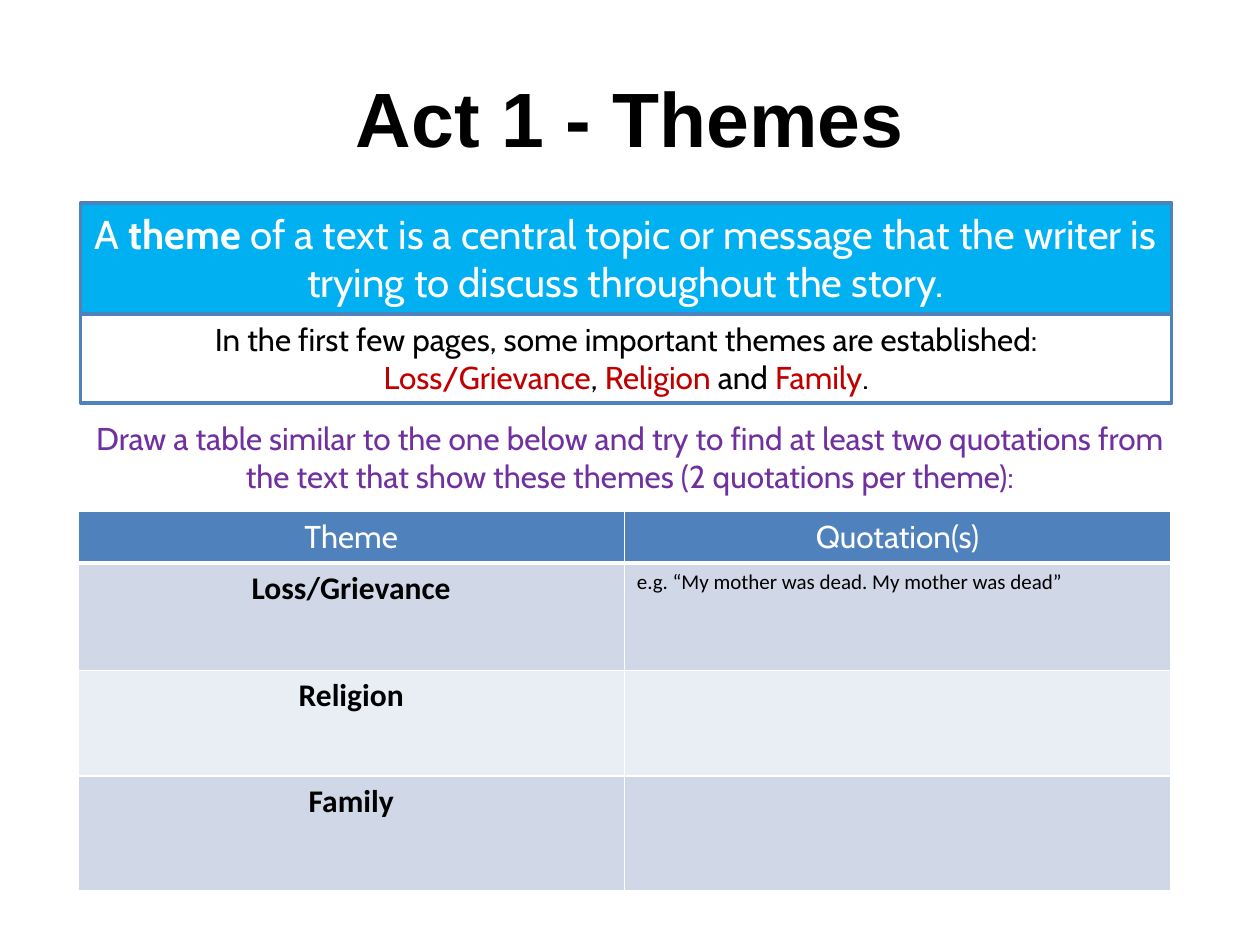
from lxml import etree
from pptx import Presentation
from pptx import util as u
from pptx.dml import color
from pptx.enum import shapes, text
from pptx.oxml import ns

BLACK, WHITE, BLUE, RED = "000000", "FFFFFF", "4F81BD", "C00000"
MID = text.PP_ALIGN.CENTER


def rgb(code):
    return color.RGBColor.from_string(code)


class Page:
    """Holds the style and the slide; lengths are cells of a 100 by 75 grid."""

    def __init__(self, deck, font):
        self.slide = deck.slides.add_slide(deck.slide_layouts[6])
        self.font = font
        self.col = deck.slide_width / 100
        self.row = deck.slide_height / 75

    def area(self, left, top, width, height):
        return (round(left * self.col), round(top * self.row),
                round(width * self.col), round(height * self.row))

    def words(self, frame, lines, size, align=MID, font=None):
        frame.word_wrap = True
        para = frame.paragraphs[0]
        para.alignment = align
        for i, line in enumerate(lines):
            if i:
                para.add_line_break()
            for part, tint, bold in line:
                run = para.add_run()
                run.text = part
                face = run.font
                face.name, face.size, face.bold = font or self.font, u.Pt(size), bold
                face.color.rgb = rgb(tint)

    def label(self, area, lines, size, font=None, anchor=text.MSO_ANCHOR.TOP):
        box = self.slide.shapes.add_textbox(*self.area(*area))
        self.words(box.text_frame, lines, size, font=font)
        box.text_frame.vertical_anchor = anchor

    def panel(self, area, lines, size, fill=None):
        box = self.slide.shapes.add_shape(shapes.MSO_SHAPE.RECTANGLE, *self.area(*area))
        box.shadow.inherit = False
        if fill:
            box.fill.solid()
            box.fill.fore_color.rgb = rgb(fill)
        else:
            box.fill.background()
        box.line.color.rgb = rgb(BLUE)
        box.line.width = u.Pt(2)
        self.words(box.text_frame, lines, size)
        box.text_frame.vertical_anchor = text.MSO_ANCHOR.TOP

    def edge(self, cell, side, width):
        props = cell._tc.get_or_add_tcPr()
        line = etree.SubElement(props, ns.qn("a:ln" + side), w=str(u.Pt(width)))
        fill = etree.SubElement(line, ns.qn("a:solidFill"))
        etree.SubElement(fill, ns.qn("a:srgbClr"), val=WHITE)

    def grid(self, area, rows, heights, fills):
        count = len(rows[0])
        table = self.slide.shapes.add_table(len(rows), count, *self.area(*area)).table
        for r, row in enumerate(rows):
            table.rows[r].height = round(heights[r] * self.row)
            for c, item in enumerate(row):
                cell = table.cell(r, c)
                for side in "LRTB":
                    thick = (r, side) in ((0, "B"), (1, "T"))
                    self.edge(cell, side, 3 if thick else 1)
                cell.fill.solid()
                cell.fill.fore_color.rgb = rgb(fills[r])
                if item:
                    self.words(cell.text_frame, **item)


def main():
    deck = Presentation()
    deck.slide_width, deck.slide_height = u.Inches(10), u.Inches(7.5)
    page = Page(deck, "Cabin")

    page.label((5, 3, 90, 12.5), [[("Act 1 - Themes", BLACK, True)]], 44,
               "Arial", text.MSO_ANCHOR.MIDDLE)
    page.panel((6.4, 16.1, 86.6, 8.8), [[
        ("A ", WHITE, False), ("theme", WHITE, True),
        (" of a text is a central topic or message that the writer is "
         "trying to discuss throughout the story.", WHITE, False)]], 23, "00B0F0")
    page.panel((6.4, 24.9, 86.6, 7.1), [
        [("In the first few pages, some important themes are established:", BLACK, False)],
        [("Loss/Grievance", RED, False), (", ", BLACK, False),
         ("Religion", RED, False), (" and ", BLACK, False),
         ("Family", RED, False), (".", BLACK, False)]], 18)
    page.label((6.3, 32.8, 87.4, 7.1), [[
        ("Draw a table similar to the one below and try to find at least two quotations "
         "from the text that show these themes (2 quotations per theme):",
         "7030A0", False)]], 18)

    heads = [dict(lines=[[(name, WHITE, False)]], size=18)
             for name in ("Theme", "Quotation(s)")]
    themes = [dict(lines=[[(name, BLACK, True)]], size=18, font="Calibri")
              for name in ("Loss/Grievance", "Religion", "Family")]
    quote = dict(lines=[[("e.g. “My mother was dead. My mother was dead”", BLACK, False)]],
                 size=12, font="Calibri", align=text.PP_ALIGN.LEFT)
    rows = [heads] + [list(pair) for pair in zip(themes, (quote, None, None))]
    page.grid((6.2, 40.6, 86.7, 30.1), rows, (4.1, 8.5, 8.4, 9.1),
              (BLUE, "D0D8E8", "E9EDF4", "D0D8E8"))
    deck.save("out.pptx")


if __name__ == "__main__":
    main()
